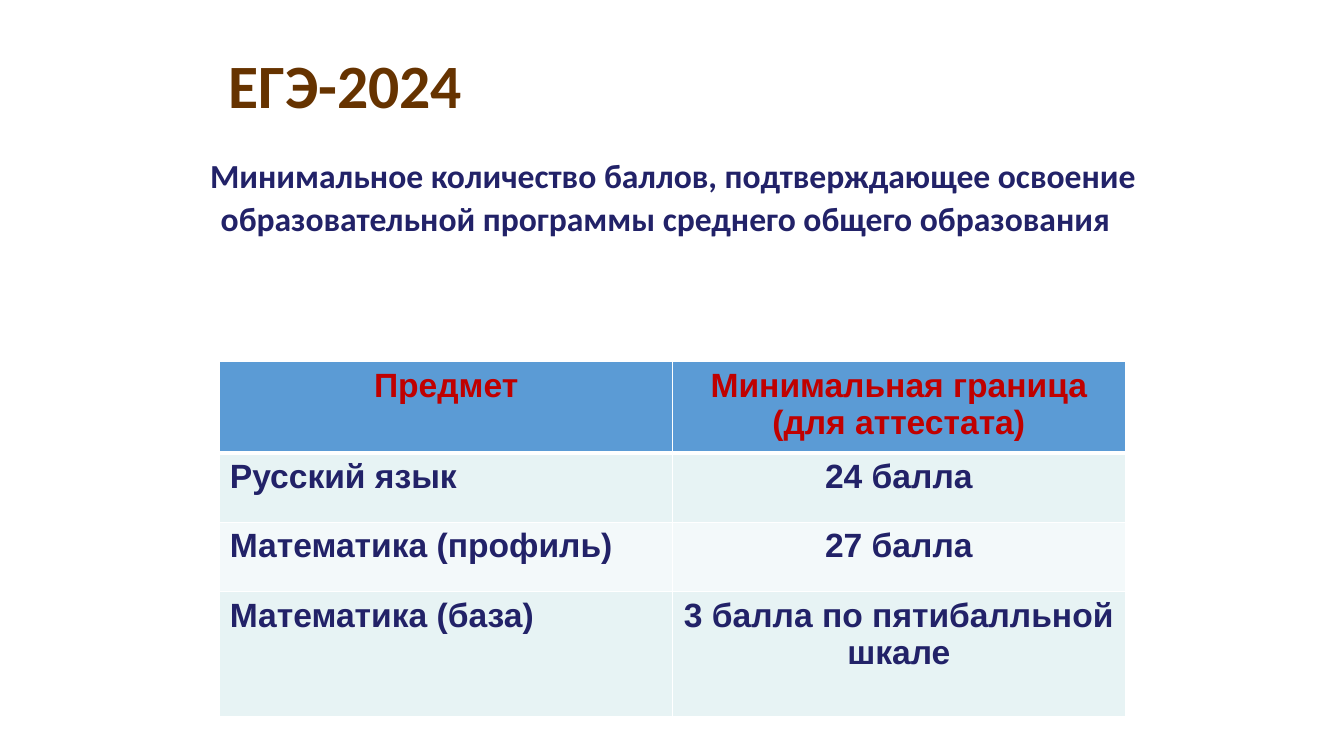
from lxml.etree import SubElement
from pptx import Presentation
from pptx.dml.color import RGBColor
from pptx.enum.text import MSO_ANCHOR, PP_ALIGN
from pptx.oxml.ns import qn
from pptx.util import Inches, Pt

BROWN = RGBColor(0x66, 0x33, 0x00)
NAVY = RGBColor(0x22, 0x22, 0x68)
RED = RGBColor(0xC0, 0x00, 0x00)
BLUE = RGBColor(0x5B, 0x9B, 0xD5)
BAND_DARK = RGBColor(0xE7, 0xF3, 0xF4)
BAND_LIGHT = RGBColor(0xF3, 0xF9, 0xFA)
WHITE = RGBColor(0xFF, 0xFF, 0xFF)


def add_run(paragraph, text, color, size, font):
    run = paragraph.add_run()
    run.text = text
    run.font.color.rgb = color
    for name, value in {"size": Pt(size), "name": font, "bold": True}.items():
        setattr(run.font, name, value)


def add_border(cell, side, width):
    line = SubElement(cell._tc.get_or_add_tcPr(), qn(f"a:ln{side}"), w=str(Pt(width)))
    SubElement(SubElement(line, qn("a:solidFill")), qn("a:srgbClr"), val=str(WHITE))


deck = Presentation()
deck.slide_width, deck.slide_height = Inches(13.33), Inches(7.5)
slide = deck.slides.add_slide(deck.slide_layouts[6])

# Heading and explanation
heading = slide.shapes.add_textbox(Inches(2.17), Inches(0.21), Inches(9), Inches(1.34)).text_frame
heading.word_wrap = True
heading.vertical_anchor = MSO_ANCHOR.MIDDLE
heading.paragraphs[0].line_spacing = 0.9
add_run(heading.paragraphs[0], "ЕГЭ-2024", BROWN, 44, "Calibri")

explanation = slide.shapes.add_textbox(Inches(1.05), Inches(1.24), Inches(11.1), Inches(1.85)).text_frame
explanation.word_wrap = True
sentence = explanation.paragraphs[0]
for name, value in {"alignment": PP_ALIGN.CENTER, "line_spacing": 0.9, "space_before": Pt(10)}.items():
    setattr(sentence, name, value)
add_run(sentence, " ", NAVY, 48, "Calibri")
add_run(sentence, "Минимальное количество баллов, подтверждающее освоение "
        "образовательной программы среднего общего образования", NAVY, 24, "Calibri")

# Minimum scores by subject
scores = [
    ("Предмет", "Минимальная граница (для аттестата)"),
    ("Русский язык", "24 балла"),
    ("Математика (профиль)", "27 балла"),
    ("Математика (база)", "3 балла по пятибалльной шкале"),
]
row_heights = [0.69, 0.69, 0.69, 1.24]
row_fills = [BLUE, BAND_DARK, BAND_LIGHT, BAND_DARK]
score_table = slide.shapes.add_table(
    len(scores), 2, Inches(2.18), Inches(3.59), Inches(8.98), Inches(sum(row_heights))).table

for row, (texts, height, fill) in enumerate(zip(scores, row_heights, row_fills)):
    score_table.rows[row].height = Inches(height)
    for column, text in enumerate(texts):
        cell = score_table.cell(row, column)
        # A thicker rule separates the header from the subjects
        widths = {"L": 1, "R": 1, "T": 3 if row == 1 else 1, "B": 3 if row == 0 else 1}
        for side, width in widths.items():
            add_border(cell, side, width)
        cell.fill.solid()
        cell.fill.fore_color.rgb = fill
        paragraph = cell.text_frame.paragraphs[0]
        paragraph.alignment = PP_ALIGN.CENTER if row == 0 or column == 1 else PP_ALIGN.LEFT
        add_run(paragraph, text, RED if row == 0 else NAVY, 24, "Arial")

deck.save("out.pptx")
